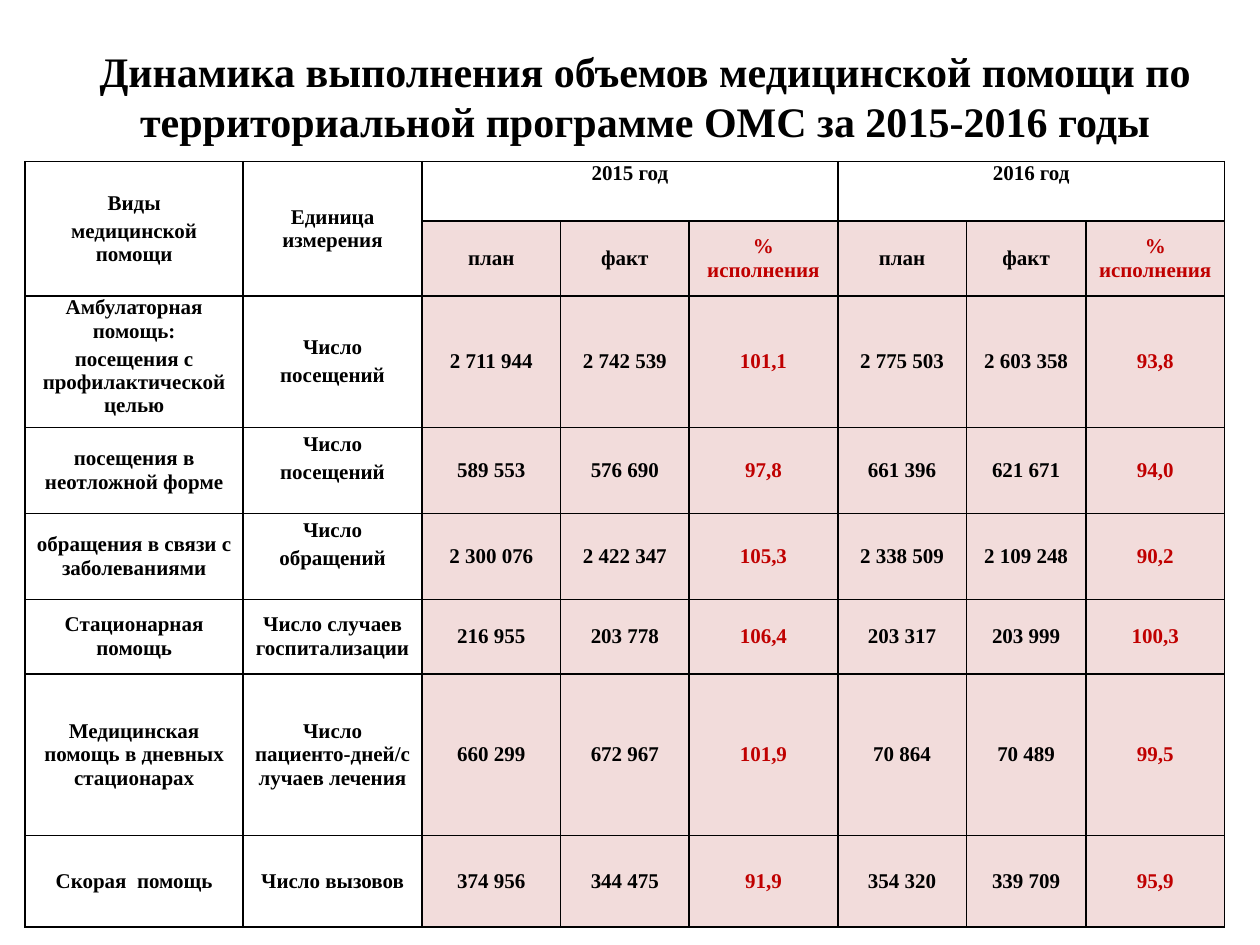
from lxml import etree
from pptx import Presentation
from pptx.dml.color import RGBColor
from pptx.enum.text import MSO_ANCHOR, MSO_AUTO_SIZE, PP_ALIGN
from pptx.oxml.ns import qn
from pptx.util import Inches, Pt

CENTER = PP_ALIGN.CENTER
TOP, MIDDLE = MSO_ANCHOR.TOP, MSO_ANCHOR.MIDDLE
NO_AUTOFIT = MSO_AUTO_SIZE.NONE
BLACK = RGBColor(0x00, 0x00, 0x00)
RED = RGBColor(0xC0, 0x00, 0x00)
PINK = RGBColor(0xF2, 0xDC, 0xDB)

COLUMNS = [17.3, 14.2, 11, 10.2, 11.8, 10.2, 9.5, 11]
ROWS = [6.3, 7.8, 13.9, 9.1, 9.1, 7.9, 17.1, 9.7]
MERGES = [(0, 0, 1, 0), (0, 1, 1, 1), (0, 2, 0, 4), (0, 5, 0, 7)]
TOP_CELLS = [(0, 2), (0, 5), (2, 0)]
RAISED_CELLS = [(3, 1), (4, 1)]
PERCENT_COLUMNS = (4, 7)
YEAR = ["план", "факт", "% исполнения"]
DATA = [
    ["Виды\nмедицинской помощи", "Единица измерения", "2015 год", "", "", "2016 год", "", ""],
    ["", "", *YEAR, *YEAR],
    ["Амбулаторная помощь:\nпосещения с профилактической целью", "Число\nпосещений",
     "2 711 944", "2 742 539", "101,1", "2 775 503", "2 603 358", "93,8"],
    ["посещения в неотложной форме", "Число\nпосещений",
     "589 553", "576 690", "97,8", "661 396", "621 671", "94,0"],
    ["обращения в связи с заболеваниями", "Число\nобращений",
     "2 300 076", "2 422 347", "105,3", "2 338 509", "2 109 248", "90,2"],
    ["Стационарная помощь", "Число случаев госпитализации",
     "216 955", "203 778", "106,4", "203 317", "203 999", "100,3"],
    ["Медицинская помощь в дневных стационарах", "Число пациенто-дней/случаев лечения",
     "660 299", "672 967", "101,9", "70 864", "70 489", "99,5"],
    ["Скорая  помощь", "Число вызовов",
     "374 956", "344 475", "91,9", "354 320", "339 709", "95,9"],
]


class SlideBuilder:
    """Holds the style and current slide; lengths are percent of the slide."""

    font = {"name": "Times New Roman", "bold": True}
    margins = {"margin_left": Inches(0.08), "margin_right": Inches(0.08),
               "margin_top": 0, "margin_bottom": 0}

    def __init__(self, prs):
        self.prs = prs
        self.s = prs.slides.add_slide(prs.slide_layouts[5])

    def x(self, share):
        return round(self.prs.slide_width * share / 100)

    def y(self, share):
        return round(self.prs.slide_height * share / 100)

    def text(self, tf, text, size, color, space=0):
        for i, line in enumerate(text.split("\n")):
            p = tf.add_paragraph() if i else tf.paragraphs[0]
            p.alignment = CENTER
            p.space_before = Pt(space)
            r = p.add_run()
            r.text = line
            for name, value in {**self.font, "size": Pt(size)}.items():
                setattr(r.font, name, value)
            r.font.color.rgb = color

    def title(self, text, left, top, width, height):
        sp = self.s.shapes.title
        sp.left, sp.top = self.x(left), self.y(top)
        sp.width, sp.height = self.x(width), self.y(height)
        tf = sp.text_frame
        tf.auto_size, tf.vertical_anchor = NO_AUTOFIT, MIDDLE
        self.text(tf, text, 24, BLACK)

    def borders(self, cell):
        tc_pr = cell._tc.get_or_add_tcPr()
        for side in ("lnL", "lnR", "lnT", "lnB"):
            ln = etree.SubElement(tc_pr, qn(f"a:{side}"), w=str(Pt(1)))
            fill = etree.SubElement(ln, qn("a:solidFill"))
            etree.SubElement(fill, qn("a:srgbClr"), val=str(BLACK))

    def cell(self, cell, text, row, col):
        for name, value in self.margins.items():
            setattr(cell, name, value)
        if (row, col) in RAISED_CELLS:
            cell.margin_bottom = Inches(0.19)
        cell.vertical_anchor = TOP if (row, col) in TOP_CELLS else MIDDLE
        self.borders(cell)
        is_value = row > 0 and col > 1
        if is_value:
            cell.fill.solid()
            cell.fill.fore_color.rgb = PINK
        else:
            cell.fill.background()
        if text:
            color = RED if is_value and col in PERCENT_COLUMNS else BLACK
            self.text(cell.text_frame, text, 12, color, 2.8)

    def table(self, data, left, top):
        table = self.s.shapes.add_table(
            len(ROWS), len(COLUMNS), self.x(left), self.y(top),
            self.x(sum(COLUMNS)), self.y(sum(ROWS))).table
        table.first_row = table.horz_banding = False
        for column, width in zip(table.columns, COLUMNS):
            column.width = self.x(width)
        for row, height in zip(table.rows, ROWS):
            row.height = self.y(height)
        for r1, c1, r2, c2 in MERGES:
            table.cell(r1, c1).merge(table.cell(r2, c2))
        for row, values in enumerate(data):
            for col, text in enumerate(values):
                self.cell(table.cell(row, col), text, row, col)


def main():
    prs = Presentation()
    prs.slide_width, prs.slide_height = Inches(10), Inches(7.5)
    builder = SlideBuilder(prs)
    builder.title("Динамика выполнения объемов медицинской помощи по "
                  "территориальной программе ОМС за 2015-2016 годы", 5.9, 2.3, 90.6, 15.6)
    builder.table(DATA, 2, 17.1)
    prs.save("out.pptx")


if __name__ == "__main__":
    main()
